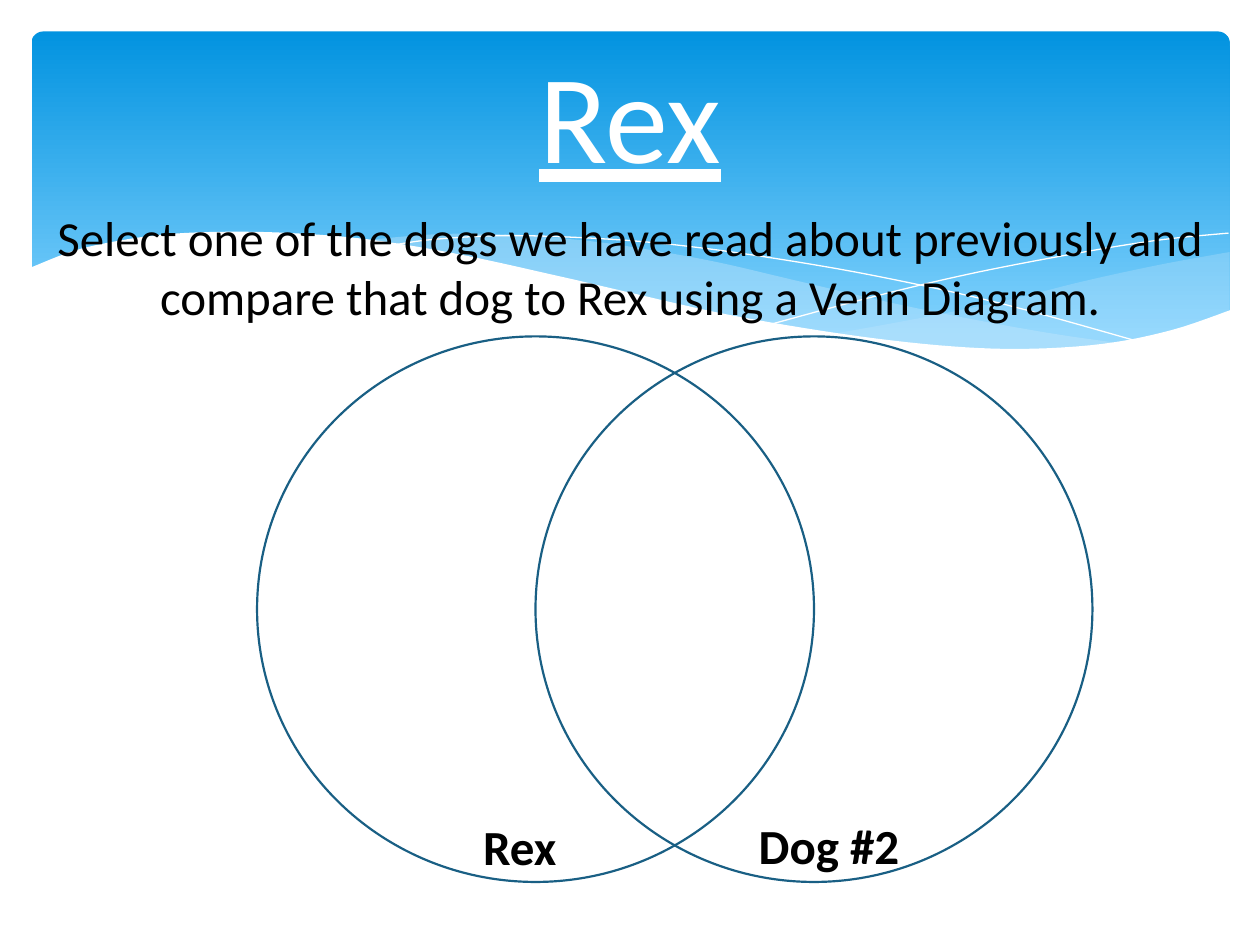
from dataclasses import dataclass
from typing import Optional

from lxml.etree import SubElement
from pptx import Presentation
from pptx.dml.color import RGBColor as Color
from pptx.enum.shapes import MSO_SHAPE as Kind
from pptx.enum.text import MSO_ANCHOR as Anchor, PP_ALIGN as Align
from pptx.oxml.ns import qn
from pptx.util import Pt

PX = 9144
STEPS = 6
WHITE = Color(0xFF, 0xFF, 0xFF)
BLACK = Color(0, 0, 0)
DEEP = Color(0x02, 0x93, 0xE0)
SKY = Color(0x83, 0xD3, 0xFE)
PALE = Color(0xC6, 0xE7, 0xFC)
NAVY = Color(0x19, 0x5F, 0x84)

Knots = list[tuple[int, int]]


@dataclass
class Wave:
    edges: list[Knots]
    fill: Optional[Color] = None
    alpha: int = 100


@dataclass
class Label:
    text: str
    box: tuple[int, int, int, int]
    size: int = 28
    color: Color = BLACK
    bold: bool = False
    line: bool = False
    anchor: Anchor = Anchor.TOP


WAVES = [
    Wave([
        [(976, 200), (921, 210), (861, 223), (805, 237), (753, 248), (706, 257), (661, 265)],
        [(661, 265), (705, 271), (757, 275), (803, 278), (854, 276), (897, 270),
         (935, 262), (976, 247)],
    ], PALE, 29),
    Wave([
        [(893, 273), (837, 265), (775, 254), (706, 240), (629, 222), (569, 208),
         (514, 198), (465, 191), (399, 186), (344, 186), (286, 191)],
        [(286, 191), (342, 199), (404, 211), (449, 222), (530, 240), (601, 255),
         (665, 266), (722, 274), (785, 278), (838, 278), (893, 273)],
    ], PALE, 40),
    Wave([[(309, 195), (344, 190), (401, 187), (469, 189), (533, 194), (608, 204),
           (695, 219), (795, 241), (907, 272)]]),
    Wave([[(613, 257), (695, 235), (776, 216), (866, 199), (924, 190), (975, 185)]]),
    Wave([
        [(977, 246), (930, 262), (875, 273), (809, 277), (744, 274), (668, 265),
         (579, 250), (503, 233), (447, 220), (365, 202), (292, 190), (230, 185),
         (177, 184), (132, 186), (95, 191), (59, 199), (23, 213)],
        [(23, 329), (977, 329)],
    ], WHITE),
]

RINGS = [(204, 267, 442, 433), (425, 267, 442, 433)]

LABELS = [
    Label("Rex", (50, 21, 900, 137), 72, WHITE, line=True, anchor=Anchor.MIDDLE),
    Label("Select one of the dogs we have read about previously and "
          "compare that dog to Rex using a Venn Diagram.", (25, 160, 950, 104)),
    Label("Rex", (300, 643, 225, 57), bold=True),
    Label("Dog #2", (558, 642, 200, 57), bold=True),
]


def scale(box: tuple[int, ...]) -> list[int]:
    return [n * PX for n in box]


def smooth(knots: Knots) -> list[tuple[float, float]]:
    if len(knots) < 3:
        return knots
    pad = [knots[0], *knots, knots[-1]]
    out = [knots[0]]
    for quad in zip(pad, pad[1:], pad[2:], pad[3:]):
        for step in range(1, STEPS + 1):
            t = step / STEPS
            out.append(tuple(
                b + t * (c - a) / 2
                + t ** 2 * (2 * a - 5 * b + 4 * c - d) / 2
                + t ** 3 * (3 * b - a - 3 * c + d) / 2
                for a, b, c, d in zip(*quad)))
    return out


def draw_sky(shapes) -> None:
    sky = shapes.add_shape(Kind.ROUNDED_RECTANGLE, *scale((25, 25, 951, 270)))
    sky.adjustments[0] = 0.034
    sky.shadow.inherit = False
    sky.line.fill.background()
    sky.fill.gradient()
    sky.fill.gradient_angle = 270
    for stop, color, place in zip(sky.fill.gradient_stops, (DEEP, SKY), (0, 0.9)):
        stop.color.rgb = color
        stop.position = place


def draw_wave(shapes, wave: Wave) -> None:
    first, *rest = [(x * PX, y * PX) for edge in wave.edges for x, y in smooth(edge)]
    pen = shapes.build_freeform(*first, scale=1.0)
    pen.add_line_segments(rest, close=wave.fill is not None)
    shape = pen.convert_to_shape()
    shape.shadow.inherit = False
    if wave.fill is None:
        shape.fill.background()
        shape.line.color.rgb = WHITE
        shape.line.width = Pt(0)
        return
    shape.line.fill.background()
    shape.fill.solid()
    shape.fill.fore_color.rgb = wave.fill
    if wave.alpha < 100:
        tint = shape.element.spPr.find(".//" + qn("a:srgbClr"))
        SubElement(tint, qn("a:alpha")).set("val", str(wave.alpha * 1000))


def draw_ring(shapes, box: tuple[int, int, int, int]) -> None:
    ring = shapes.add_shape(Kind.OVAL, *scale(box))
    ring.shadow.inherit = False
    ring.fill.background()
    ring.line.color.rgb = NAVY
    ring.line.width = Pt(1.25)


def draw_label(shapes, label: Label) -> None:
    frame = shapes.add_textbox(*scale(label.box)).text_frame
    frame.word_wrap = True
    frame.vertical_anchor = label.anchor
    para = frame.paragraphs[0]
    para.text = label.text
    para.alignment = Align.CENTER
    font = para.font
    font.name = "Calibri"
    font.size = Pt(label.size)
    font.color.rgb = label.color
    font.bold = label.bold
    font.underline = label.line


def main() -> None:
    deck = Presentation()
    deck.slide_width, deck.slide_height = scale((1000, 750))
    shapes = deck.slides.add_slide(deck.slide_layouts[6]).shapes
    draw_sky(shapes)
    for wave in WAVES:
        draw_wave(shapes, wave)
    for ring in RINGS:
        draw_ring(shapes, ring)
    for label in LABELS:
        draw_label(shapes, label)
    deck.save("out.pptx")


if __name__ == "__main__":
    main()
